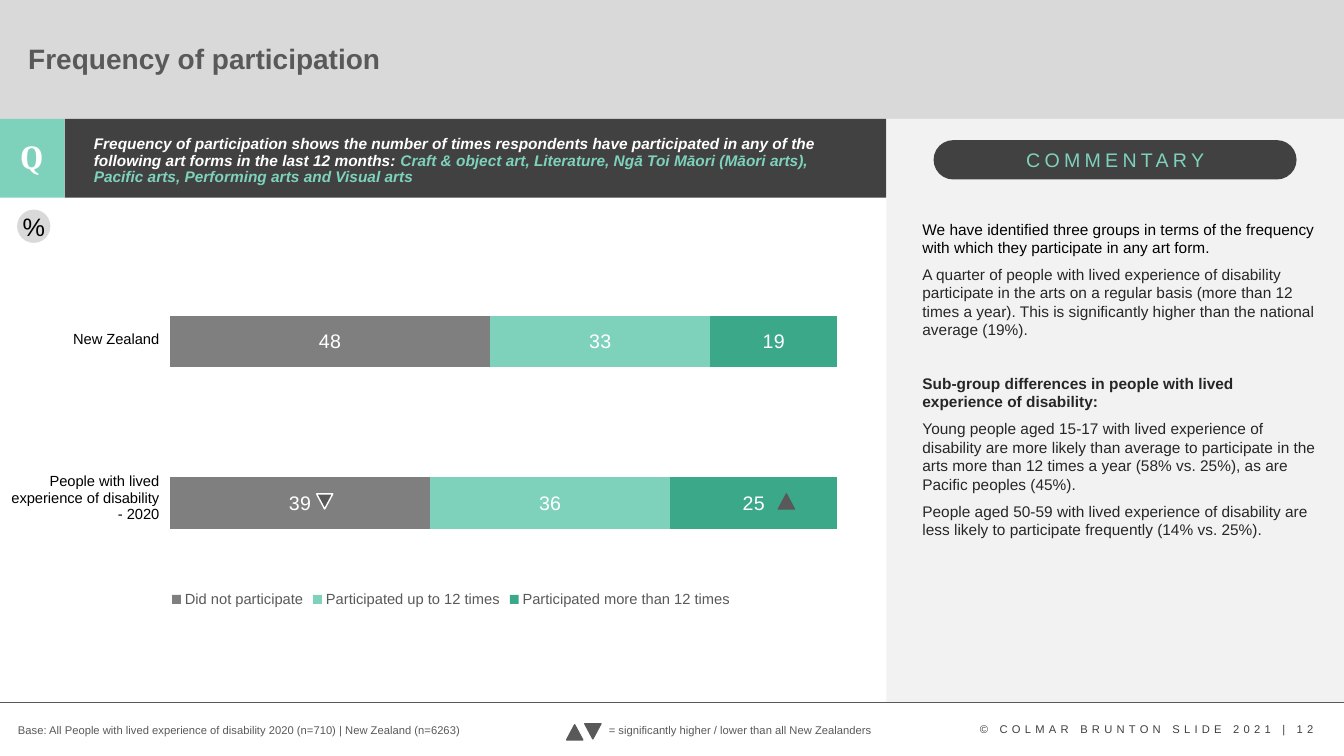
import dataclasses
import typing

import pptx
import pptx.chart.data
import pptx.dml.color
import pptx.enum.chart
import pptx.enum.shapes
import pptx.enum.text
import pptx.oxml
import pptx.oxml.ns
import pptx.util

Inches = pptx.util.Inches
Pt = pptx.util.Pt
SHAPE = pptx.enum.shapes.MSO_SHAPE
ALIGN = pptx.enum.text.PP_ALIGN
ANCHOR = pptx.enum.text.MSO_ANCHOR
qn = pptx.oxml.ns.qn

FONT = "Arial"
WHITE, BLACK = "FFFFFF", "000000"
GREY, CHARCOAL, PALE, SILVER = "595959", "414141", "F2F2F2", "D9D9D9"
MINT, GREEN, MID_GREY, INK = "7ED2BB", "3AA889", "7F7F7F", "262626"


@dataclasses.dataclass(frozen=True)
class Box:
    left: float
    top: float
    width: float
    height: float

    def lengths(self) -> list[int]:
        return [Inches(v) for v in (self.left, self.top, self.width, self.height)]


@dataclasses.dataclass(frozen=True)
class Panel:
    box: Box
    fill: str
    geometry: typing.Any = SHAPE.RECTANGLE


@dataclasses.dataclass(frozen=True)
class Marker:
    """A triangle that flags a significant difference."""
    left: float
    top: float
    higher: bool
    outline: str = GREY


@dataclasses.dataclass(frozen=True)
class Comment:
    text: str
    space_before: float = 6
    color: str = INK
    bold: bool = False


@dataclasses.dataclass(frozen=True)
class Frequency:
    label: str
    shares: tuple[int, int]
    color: str


PANELS = [
    Panel(Box(0, -0.02, 13.33, 1.2), SILVER),
    Panel(Box(8.79, 1.18, 4.55, 5.79), PALE),
    Panel(Box(0.64, 1.18, 8.15, 0.78), CHARCOAL),
    Panel(Box(0, 1.18, 0.64, 0.78), MINT),
    Panel(Box(9.26, 1.39, 3.6, 0.39), CHARCOAL, SHAPE.ROUNDED_RECTANGLE),
]
KEY_MARKERS = [Marker(5.62, 7.19, True), Marker(5.8, 7.18, False)]
BAR_MARKERS = [Marker(7.72, 4.9, True), Marker(3.14, 4.9, False, WHITE)]
COMMENTS = [
    Comment("We have identified three groups in terms of the frequency with which they "
            "participate in any art form.", 0, BLACK),
    Comment("A quarter of people with lived experience of disability participate in the arts "
            "on a regular basis (more than 12 times a year). This is significantly higher "
            "than the national average (19%)."),
    Comment("Sub-group differences in people with lived experience of disability:", 25, bold=True),
    Comment("Young people aged 15-17 with lived experience of disability are more likely than "
            "average to participate in the arts more than 12 times a year (58% vs. 25%), as are "
            "Pacific peoples (45%)."),
    Comment("People aged 50-59 with lived experience of disability are less likely to "
            "participate frequently (14% vs. 25%)."),
]
FREQUENCIES = [
    Frequency("Did not participate", (39, 48), MID_GREY),
    Frequency("Participated up to 12 times", (36, 33), MINT),
    Frequency("Participated more than 12 times", (25, 19), GREEN),
]
GROUPS = [("New Zealand", 1.6), ("People with lived experience of disability - 2020", 1.55)]


def rgb(color: str) -> pptx.dml.color.RGBColor:
    return pptx.dml.color.RGBColor.from_string(color)


def style_font(font, size: float, color: str, face: str = FONT) -> None:
    font.size, font.name = Pt(size), face
    font.color.rgb = rgb(color)


def write(paragraph, text: str, *, size: float, color: str, face: str = FONT, bold: bool = False,
          italic: bool = False, tracking: float = 0, align=ALIGN.LEFT, space_before: float = 0,
          line_spacing: float = 1.0) -> None:
    paragraph.alignment = align
    paragraph.space_before = Pt(space_before)
    paragraph.line_spacing = line_spacing
    run = paragraph.add_run()
    run.text = text
    style_font(run.font, size, color, face)
    run.font.bold, run.font.italic = bold, italic
    if tracking:
        run.font._element.set("spc", str(int(tracking * 100)))


def add_label(shapes, box: Box, text: str, wrap: bool = True, **text_format) -> None:
    frame = shapes.add_textbox(*box.lengths()).text_frame
    frame.word_wrap = wrap
    write(frame.paragraphs[0], text, **text_format)


def add_panel(shapes, panel: Panel):
    shape = shapes.add_shape(panel.geometry, *panel.box.lengths())
    shape.shadow.inherit = False
    shape.fill.solid()
    shape.fill.fore_color.rgb = rgb(panel.fill)
    shape.line.fill.background()
    if panel.geometry == SHAPE.ROUNDED_RECTANGLE:
        shape.adjustments[0] = 0.5
    return shape


def add_marker(shapes, marker: Marker) -> None:
    triangle = add_panel(shapes, Panel(Box(marker.left, marker.top, 0.16, 0.15), GREY,
                                       SHAPE.ISOSCELES_TRIANGLE))
    triangle.line.color.rgb = rgb(marker.outline)
    triangle.line.width = Pt(1)
    triangle.rotation = 0 if marker.higher else 180


def place_placeholder(placeholder, box: Box, anchor):
    """Move a placeholder above the panels and return its emptied first paragraph."""
    placeholder.left, placeholder.top, placeholder.width, placeholder.height = box.lengths()
    tree = placeholder.element.getparent()
    tree.append(placeholder.element)
    frame = placeholder.text_frame
    frame.auto_size = pptx.enum.text.MSO_AUTO_SIZE.NONE
    frame.word_wrap = True
    frame.vertical_anchor = anchor
    paragraph = frame.paragraphs[0]
    properties = paragraph._p.get_or_add_pPr()
    properties.set("marL", "0")
    properties.set("indent", "0")
    properties.append(pptx.oxml.parse_xml(f"<a:buNone {pptx.oxml.ns.nsdecls('a')}/>"))
    return paragraph


def add_frequency_chart(shapes, box: Box) -> None:
    data = pptx.chart.data.CategoryChartData()
    data.categories = ["1", "2"]
    for frequency in FREQUENCIES:
        data.add_series(frequency.label, frequency.shares)
    chart = shapes.add_chart(pptx.enum.chart.XL_CHART_TYPE.BAR_STACKED_100, *box.lengths(), data).chart
    style_font(chart.font, 10, BLACK)
    chart.has_title = False
    chart.value_axis.has_major_gridlines = False
    chart.value_axis.visible = chart.category_axis.visible = False
    chart.has_legend = True
    chart.legend.position = pptx.enum.chart.XL_LEGEND_POSITION.BOTTOM
    chart.legend.include_in_layout = False
    style_font(chart.legend.font, 10.5, GREY)
    plot = chart.plots[0]
    plot.gap_width, plot.overlap, plot.vary_by_categories = 213, 100, False
    for series, frequency in zip(plot.series, FREQUENCIES):
        series.format.fill.solid()
        series.format.fill.fore_color.rgb = rgb(frequency.color)
        series.data_labels.show_value = True
        style_font(series.data_labels.font, 14, WHITE)
    area = chart._chartSpace.chart.plotArea
    for layout in area.findall(qn("c:layout")):
        area.remove(layout)
    settings = {"layoutTarget": "inner", "xMode": "edge", "yMode": "edge",
                "x": 0.157, "y": 0.131, "w": 0.814, "h": 0.801}
    inner = "".join(f'<c:{tag} val="{value}"/>' for tag, value in settings.items())
    area.insert(0, pptx.oxml.parse_xml(
        f"<c:layout {pptx.oxml.ns.nsdecls('c')}><c:manualLayout>{inner}</c:manualLayout></c:layout>"))


def add_group_table(shapes, box: Box) -> None:
    table = shapes.add_table(len(GROUPS), 1, *box.lengths()).table
    table.first_row = table.horz_banding = False
    for index, (group, height) in enumerate(GROUPS):
        table.rows[index].height = Inches(height)
        cell = table.cell(index, 0)
        cell.fill.background()
        cell.vertical_anchor = ANCHOR.MIDDLE
        cell.margin_left = cell.margin_right = cell.margin_top = Inches(0.01)
        cell.margin_bottom = 0
        write(cell.text_frame.paragraphs[0], group, size=10.5, color=BLACK, align=ALIGN.RIGHT)


def main() -> None:
    deck = pptx.Presentation()
    deck.slide_width, deck.slide_height = Inches(13.33), Inches(7.5)
    slide = deck.slides.add_slide(deck.slide_layouts[1])
    shapes = slide.shapes

    for panel in PANELS:
        add_panel(shapes, panel)
    footer_rule = shapes.add_connector(pptx.enum.shapes.MSO_CONNECTOR.STRAIGHT,
                                       0, Inches(6.97), Inches(13.33), Inches(6.97))
    footer_rule.line.color.rgb = rgb(GREY)
    footer_rule.line.width = Pt(0.5)
    footer_rule._element.spPr.append(
        pptx.oxml.parse_xml(f"<a:effectLst {pptx.oxml.ns.nsdecls('a')}/>"))
    add_label(shapes, Box(9.62, 7.12, 3.61, 0.24), "© COLMAR BRUNTON SLIDE 2021 | 12",
              size=8, color="404040", tracking=3)
    add_label(shapes, Box(0.08, 1.3, 0.47, 0.5), "Q", size=24, color=WHITE, face="Cambria",
              bold=True, align=ALIGN.CENTER)
    add_label(shapes, Box(10.08, 1.42, 2.02, 0.34), "COMMENTARY", wrap=False,
              size=14, color=MINT, tracking=3)

    title = place_placeholder(shapes.title, Box(0.18, 0.21, 11.19, 0.78), ANCHOR.MIDDLE)
    write(title, "Frequency of participation", size=20, color=GREY, bold=True, line_spacing=0.9)
    question = place_placeholder(slide.placeholders[1], Box(0.83, 1.3, 7.6, 0.46), ANCHOR.TOP)
    for part, color in [
        ("Frequency of participation shows the number of times respondents have participated in "
         "any of the following art forms in the last 12 months: ", WHITE),
        ("Craft & object art, Literature, Ngā Toi Māori (Māori arts), Pacific arts, Performing "
         "arts and Visual arts", MINT),
    ]:
        write(question, part, size=11, color=color, bold=True, italic=True, line_spacing=0.9)

    add_frequency_chart(shapes, Box(0.41, 2.06, 8.13, 4.01))

    commentary = shapes.add_textbox(*Box(9.05, 2.13, 4.12, 3.3).lengths()).text_frame
    commentary.word_wrap = True
    for index, comment in enumerate(COMMENTS):
        paragraph = commentary.add_paragraph() if index else commentary.paragraphs[0]
        write(paragraph, comment.text, size=11, color=comment.color, bold=comment.bold,
              space_before=comment.space_before)

    unit = add_panel(shapes, Panel(Box(0.17, 2.08, 0.33, 0.33), SILVER, SHAPE.OVAL)).text_frame
    unit.margin_left = unit.margin_right = unit.margin_top = unit.margin_bottom = 0
    unit.vertical_anchor = ANCHOR.MIDDLE
    write(unit.paragraphs[0], "%", size=18, color=BLACK, align=ALIGN.CENTER)

    add_label(shapes, Box(0.08, 7.13, 5.15, 0.24),
              "Base: All People with lived experience of disability 2020 (n=710) | "
              "New Zealand (n=6263)", size=8, color=GREY)
    significance_key = shapes.add_group_shape().shapes
    add_label(significance_key, Box(5.94, 7.13, 2.84, 0.24),
              "= significantly higher / lower than all New Zealanders", wrap=False,
              size=8, color=GREY)
    for marker in KEY_MARKERS:
        add_marker(significance_key, marker)

    add_group_table(shapes, Box(0.08, 2.56, 1.51, 3.15))
    for marker in BAR_MARKERS:
        add_marker(shapes, marker)
    deck.save("out.pptx")


if __name__ == "__main__":
    main()
